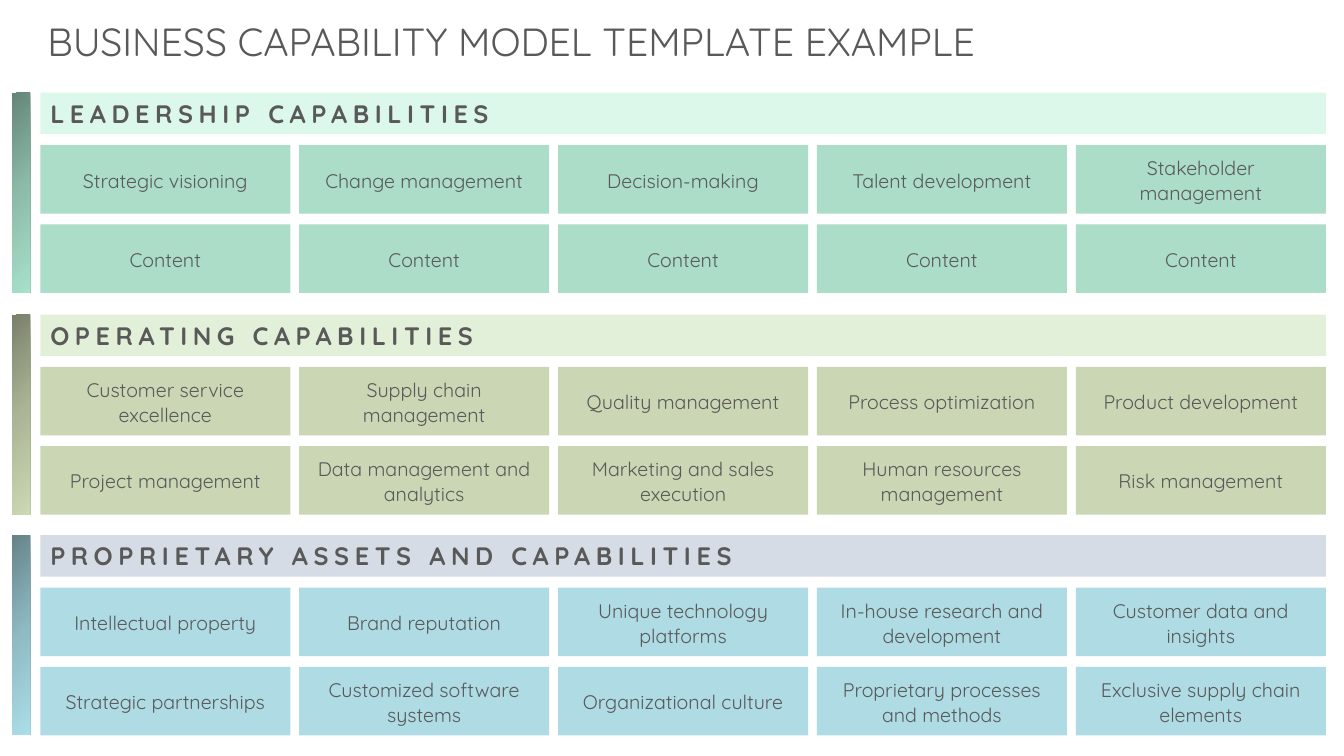
from copy import deepcopy
from dataclasses import dataclass

from pptx import Presentation
from pptx.dml.color import RGBColor
from pptx.enum.shapes import MSO_SHAPE
from pptx.enum.text import MSO_ANCHOR, MSO_AUTO_SIZE, PP_ALIGN
from pptx.oxml.ns import qn
from pptx.util import Inches, Pt

RECTANGLE = MSO_SHAPE.RECTANGLE
TOP, MIDDLE = MSO_ANCHOR.TOP, MSO_ANCHOR.MIDDLE
LEFT, CENTER = PP_ALIGN.LEFT, PP_ALIGN.CENTER
NO_AUTOFIT = MSO_AUTO_SIZE.NONE


@dataclass(frozen=True)
class Theme:
    font: str = "Quicksand"
    text: str = "595959"
    title_size: int = 28
    heading_size: int = 18
    tile_size: int = 14
    heading_spacing: int = 4
    tile_leading: float = 1.07


# Layout in inches; every offset is measured from the top of a section
GRID_LEFT, GRID_WIDTH = 0.4, 12.75
TILE_WIDTH, TILE_HEIGHT = 2.48, 0.68
COLUMNS = 5
COLUMN_STEP = (GRID_WIDTH - TILE_WIDTH) / (COLUMNS - 1)
FIRST_ROW, ROW_STEP = 0.52, 0.785
HEADING_HEIGHT = 0.41
SPINE_LEFT, SPINE_WIDTH, SPINE_HEIGHT = 0.12, 0.18, 1.98

# Heading, top, heading colour, tile colour, spine gradient, rows of tiles
SECTIONS = [
    ("LEADERSHIP CAPABILITIES", 0.92, "DCF8EB", "ABDDC9",
     ("638578", "8DBDAA", "A7E1CA"),
     [["Strategic visioning", "Change management", "Decision-making",
       "Talent development", "Stakeholder management"],
      ["Content"] * COLUMNS]),
    ("OPERATING CAPABILITIES", 3.12, "E2F0D9", "CBD6B5",
     ("79806A", "ACB696", "CCD8B3"),
     [["Customer service excellence", "Supply chain management",
       "Quality management", "Process optimization", "Product development"],
      ["Project management", "Data management and analytics",
       "Marketing and sales execution", "Human resources management",
       "Risk management"]]),
    ("PROPRIETARY ASSETS AND CAPABILITIES", 5.31, "D6DCE5", "AEDBE4",
     ("658389", "8FBBC4", "AADEE8"),
     [["Intellectual property", "Brand reputation",
       "Unique technology platforms", "In-house research and development",
       "Customer data and insights"],
      ["Strategic partnerships", "Customized software systems",
       "Organizational culture", "Proprietary processes and methods",
       "Exclusive supply chain elements"]]),
]


def write_text(shape, text, *, font, size, color, bold=False, align=LEFT,
               anchor=MIDDLE, leading=1.0, spacing=0):
    frame = shape.text_frame
    frame.word_wrap = True
    frame.auto_size = NO_AUTOFIT
    frame.vertical_anchor = anchor
    paragraph = frame.paragraphs[0]
    paragraph.alignment = align
    paragraph.line_spacing = leading
    run = paragraph.add_run()
    run.text = text
    run.font.name = font
    run.font.size = Pt(size)
    run.font.bold = bold
    run.font.color.rgb = RGBColor.from_string(color)
    if spacing:
        run.font._element.set("spc", str(spacing * 100))


class CapabilitySlide:
    def __init__(self, slide, theme):
        self.slide = slide
        self.theme = theme

    def title(self, text):
        title = self.slide.shapes.title
        title.left, title.top = Inches(0.37), Inches(0.12)
        title.width, title.height = Inches(12.75), Inches(0.57)
        write_text(title, text, font=self.theme.font, color=self.theme.text,
                   size=self.theme.title_size, anchor=TOP)

    def rectangle(self, left, top, width, height):
        block = self.slide.shapes.add_shape(
            RECTANGLE, Inches(left), Inches(top), Inches(width), Inches(height))
        block.shadow.inherit = False
        block.line.fill.background()
        return block

    def panel(self, left, top, width, height, color):
        panel = self.rectangle(left, top, width, height)
        panel.fill.solid()
        panel.fill.fore_color.rgb = RGBColor.from_string(color)
        return panel

    def heading(self, text, top, color):
        heading = self.panel(GRID_LEFT, top, GRID_WIDTH, HEADING_HEIGHT, color)
        write_text(heading, text, font=self.theme.font, color=self.theme.text,
                   size=self.theme.heading_size, bold=True,
                   spacing=self.theme.heading_spacing)

    def tile(self, text, left, top, color):
        tile = self.panel(left, top, TILE_WIDTH, TILE_HEIGHT, color)
        write_text(tile, text, font=self.theme.font, color=self.theme.text,
                   size=self.theme.tile_size, align=CENTER,
                   leading=self.theme.tile_leading)

    def spine(self, top, colors):
        spine = self.rectangle(SPINE_LEFT, top, SPINE_WIDTH, SPINE_HEIGHT)
        spine.fill.gradient()
        spine.fill.gradient_angle = 315
        # The default gradient has two stops; add one for the middle colour
        stop_list = spine._element.spPr.find(qn("a:gradFill")).find(qn("a:gsLst"))
        stop_list.insert(1, deepcopy(stop_list[0]))
        for index, (stop, color) in enumerate(zip(spine.fill.gradient_stops, colors)):
            stop.position = index / (len(colors) - 1)
            stop.color.rgb = RGBColor.from_string(color)

    def section(self, heading, top, heading_color, tile_color, gradient, rows):
        self.spine(top, gradient)
        self.heading(heading, top, heading_color)
        for row, capabilities in enumerate(rows):
            for column, capability in enumerate(capabilities):
                self.tile(capability, GRID_LEFT + column * COLUMN_STEP,
                          top + FIRST_ROW + row * ROW_STEP, tile_color)


def main():
    presentation = Presentation()
    presentation.slide_width = Inches(13.33)
    presentation.slide_height = Inches(7.5)
    title_only = presentation.slide_layouts[5]
    model = CapabilitySlide(presentation.slides.add_slide(title_only), Theme())

    # Title and the three capability sections
    model.title("BUSINESS CAPABILITY MODEL TEMPLATE EXAMPLE")
    for section in SECTIONS:
        model.section(*section)

    presentation.save("out.pptx")


if __name__ == "__main__":
    main()
